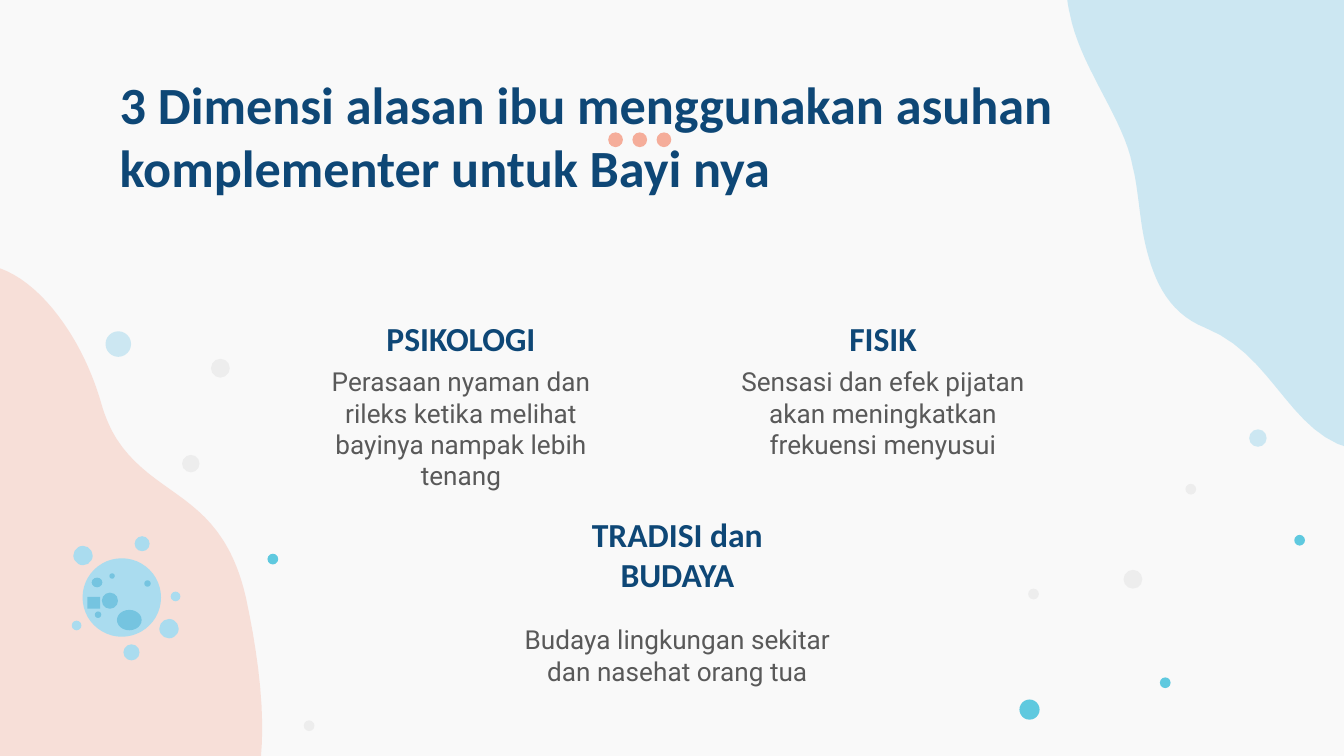
from lxml import etree
from pptx import Presentation
from pptx.dml.color import RGBColor
from pptx.enum.shapes import MSO_SHAPE
from pptx.enum.text import MSO_ANCHOR, MSO_AUTO_SIZE, PP_ALIGN
from pptx.oxml.ns import qn
from pptx.util import Inches, Pt

OVAL, RECTANGLE = MSO_SHAPE.OVAL, MSO_SHAPE.RECTANGLE
TOP, MIDDLE = MSO_ANCHOR.TOP, MSO_ANCHOR.MIDDLE
LEFT, CENTER = PP_ALIGN.LEFT, PP_ALIGN.CENTER
NO_FIT = MSO_AUTO_SIZE.NONE

PAPER = RGBColor(0xF9, 0xF9, 0xF9)
NAVY = RGBColor(0x0E, 0x47, 0x76)
GREY = RGBColor(0x59, 0x59, 0x59)
SKY = RGBColor(0xAA, 0xDB, 0xEE)
TEAL = RGBColor(0x02, 0xAC, 0xD0)
SILVER = RGBColor(0xED, 0xED, 0xED)
PEACH = RGBColor(0xF5, 0xAD, 0x9A)
PLANET = RGBColor(0xAA, 0xDC, 0xEF)
CRATER = RGBColor(0x75, 0xC4, 0xE0)

SLIDE_W = Inches(10)
SLIDE_H = SLIDE_W * 9 // 16
COLUMN = SLIDE_W // 10  # all lengths are in columns of a ten-column grid

# Each blob: a start point, then cubic curves as x1, y1, x2, y2, x, y.
RIGHT_BLOB = (7.96, 0.1), [
    (8.03, 0.47, 8.32, 0.83, 8.41, 1.16), (8.42, 1.2, 8.43, 1.25, 8.44, 1.29),
    (8.47, 1.44, 8.48, 1.6, 8.51, 1.76), (8.57, 2.05, 8.67, 2.32, 8.97, 2.44),
    (9.59, 2.69, 9.62, 3.5, 10.44, 3.34), (11, 3.23, 11.23, 2.33, 11.34, 1.67),
    (11.37, 1.49, 11.37, 1.34, 11.35, 1.21), (11.27, 0.81, 10.97, 0.62, 10.9, 0.22),
    (10.88, 0.13, 10.87, 0.03, 10.88, -0.08), (10.9, -0.26, 10.89, -0.46, 10.86, -0.66),
    (10.79, -1.02, 10.61, -1.35, 10.28, -1.42), (9.04, -1.65, 8.09, -0.67, 7.97, -0.26),
    (7.93, -0.14, 7.93, -0.02, 7.96, 0.1)]
LEFT_BLOB = (-1.9, 4.24), [
    (-1.7, 4.56, -1.29, 4.79, -1.09, 5.07), (-1.06, 5.1, -1.04, 5.14, -1.01, 5.17),
    (-0.93, 5.3, -0.85, 5.45, -0.77, 5.59), (-0.61, 5.83, -0.42, 6.04, -0.09, 6.04),
    (0.58, 6.05, 0.9, 6.78, 1.61, 6.33), (2.08, 6.03, 1.97, 5.1, 1.83, 4.45),
    (1.79, 4.27, 1.73, 4.13, 1.66, 4.02), (1.44, 3.67, 1.09, 3.61, 0.87, 3.27),
    (0.82, 3.19, 0.78, 3.1, 0.75, 2.99), (0.7, 2.82, 0.62, 2.63, 0.51, 2.46),
    (0.31, 2.15, 0.03, 1.91, -0.3, 1.97), (-1.55, 2.22, -2.06, 3.48, -2.02, 3.9),
    (-2.01, 4.03, -1.97, 4.14, -1.9, 4.24)]

# Bubbles by colour and opacity: centre x, centre y, diameter.
BUBBLES = [
    (SKY, 57, [(0.88, 2.56, 0.19), (9.36, 3.26, 0.13)]),
    (TEAL, 62, [(2.03, 4.16, 0.08), (8.67, 5.08, 0.08),
                (7.66, 5.28, 0.15), (9.67, 4.02, 0.08)]),
    (SILVER, 100, [(1.42, 3.45, 0.13), (2.3, 5.4, 0.08), (1.64, 2.74, 0.14),
                   (8.86, 3.64, 0.08), (7.69, 4.42, 0.08), (8.43, 4.31, 0.14)]),
]

# Planet parts as shares of its width: centre x, centre y, width, height.
MOONS = [(0.56, 1.08, 0.15, 0.15), (0.66, 0.07, 0.14, 0.14), (0.91, 0.86, 0.18, 0.18),
         (0.11, 0.18, 0.18, 0.18), (0.05, 0.83, 0.09, 0.09), (0.97, 0.56, 0.09, 0.09)]
GLOBE = (0.47, 0.57, 0.73, 0.73)
CRATERS = [(0.25, 0.73, 0.06, 0.06), (0.36, 0.6, 0.15, 0.15), (0.54, 0.78, 0.23, 0.19),
           (0.24, 0.43, 0.1, 0.09), (0.71, 0.44, 0.06, 0.06), (0.38, 0.37, 0.05, 0.05)]
PATCH = (0.21, 0.62, 0.12, 0.11)

HEADING_W, HEADING_H = 2.29, 0.27
BODY_W = 2.58


def grid(*lengths):
    return [round(v * COLUMN) for v in lengths]


def paint(sp, color, opacity=100):
    sp.shadow.inherit = False
    sp.fill.solid()
    sp.fill.fore_color.rgb = color
    sp.line.fill.background()
    if opacity < 100:
        clr = sp._element.spPr.find(qn("a:solidFill")).find(qn("a:srgbClr"))
        etree.SubElement(clr, qn("a:alpha")).set("val", str(opacity * 1000))


def add_spot(slide, kind, cx, cy, w, h, color, opacity=100):
    sp = slide.shapes.add_shape(kind, *grid(cx - w / 2, cy - h / 2, w, h))
    paint(sp, color, opacity)


def add_blob(slide, outline, color, opacity, steps=16):
    """Draw a closed outline of cubic curves, each cut into short segments."""
    start, curves = outline
    points, (x0, y0) = [], start
    for x1, y1, x2, y2, x3, y3 in curves:
        for i in range(1, steps + 1):
            t, u = i / steps, 1 - i / steps
            a, b, c, d = u ** 3, 3 * u * u * t, 3 * u * t * t, t ** 3
            points.append(grid(a * x0 + b * x1 + c * x2 + d * x3,
                               a * y0 + b * y1 + c * y2 + d * y3))
        x0, y0 = x3, y3
    builder = slide.shapes.build_freeform(*grid(*start))
    builder.add_line_segments(points, close=True)
    paint(builder.convert_to_shape(), color, opacity)


def add_bubbles(slide):
    for color, opacity, dots in BUBBLES:
        for cx, cy, d in dots:
            add_spot(slide, OVAL, cx, cy, d, d, color, opacity)


def add_planet(slide, left, top, width):
    parts = [(OVAL, p, PLANET) for p in MOONS + [GLOBE]]
    parts += [(RECTANGLE, PATCH, CRATER)] + [(OVAL, p, CRATER) for p in CRATERS]
    for kind, (cx, cy, w, h), color in parts:
        add_spot(slide, kind, left + cx * width, top + cy * width,
                 w * width, h * width, color)


def add_accent_dots(slide, cx, cy, gap, size):
    for i in (-1, 0, 1):
        add_spot(slide, OVAL, cx + i * gap, cy, size, size, PEACH)


def write(sp, box, text, font, size, color, bold, align, anchor):
    sp.left, sp.top, sp.width, sp.height = grid(*box)
    tf = sp.text_frame
    tf.text = text
    tf.word_wrap = True
    tf.auto_size = NO_FIT
    tf.vertical_anchor = anchor
    tf.margin_left = tf.margin_right = tf.margin_top = tf.margin_bottom = Inches(0.1)
    p = tf.paragraphs[0]
    p.alignment = align
    p.line_spacing = 1.0
    p.space_before = p.space_after = Pt(0)
    p.font.name, p.font.size, p.font.bold = font, Pt(size), bold
    p.font.color.rgb = color
    pPr = p._p.get_or_add_pPr()
    pPr.set("marL", "0")
    pPr.set("indent", "0")
    pPr.find(qn("a:defRPr")).addprevious(etree.Element(qn("a:buNone")))


def add_dimension(heading_sp, body_sp, cx, heading_top, body_top, body_h, heading, body):
    write(body_sp, (cx - BODY_W / 2, body_top, BODY_W, body_h), body,
          "Roboto", 14, GREY, False, CENTER, TOP)
    write(heading_sp, (cx - HEADING_W / 2, heading_top, HEADING_W, HEADING_H), heading,
          "Calibri", 18, NAVY, True, CENTER, MIDDLE)


def build_slide(prs):
    slide = prs.slides.add_slide(prs.slide_layouts.get_by_name("Comparison"))
    slide.background.fill.solid()
    slide.background.fill.fore_color.rgb = PAPER
    title, *pairs = [sp for sp in slide.placeholders
                     if sp.placeholder_format.idx < 10]
    pairs += [slide.shapes.add_textbox(0, 0, 0, 0) for _ in range(2)]

    add_blob(slide, RIGHT_BLOB, SKY, 57)
    add_blob(slide, LEFT_BLOB, PEACH, 34)
    add_bubbles(slide)
    add_planet(slide, 0.53, 3.99, 0.8)

    # Text lies over the decoration.
    for sp in [title] + pairs:
        slide.shapes._spTree.append(sp._element)
    write(title, (0.79, 0.44, 8.43, 0.67),
          "3 Dimensi alasan ibu menggunakan asuhan komplementer untuk Bayi nya",
          "Calibri", 28, NAVY, True, LEFT, TOP)
    dimensions = [
        (3.43, 2.38, 2.62, 0.76, "PSIKOLOGI",
         "Perasaan nyaman dan rileks ketika melihat bayinya nampak lebih tenang"),
        (6.57, 2.38, 2.62, 0.76, "FISIK",
         "Sensasi dan efek pijatan akan meningkatkan frekuensi menyusui"),
        (5.04, 3.99, 4.54, 0.61, "TRADISI dan BUDAYA",
         "Budaya lingkungan sekitar dan nasehat orang tua"),
    ]
    for heading_sp, body_sp, dimension in zip(pairs[::2], pairs[1::2], dimensions):
        add_dimension(heading_sp, body_sp, *dimension)
    add_accent_dots(slide, 4.76, 1.04, 0.18, 0.11)


def main():
    prs = Presentation()
    prs.slide_width, prs.slide_height = SLIDE_W, SLIDE_H
    build_slide(prs)
    prs.save("out.pptx")


if __name__ == "__main__":
    main()
